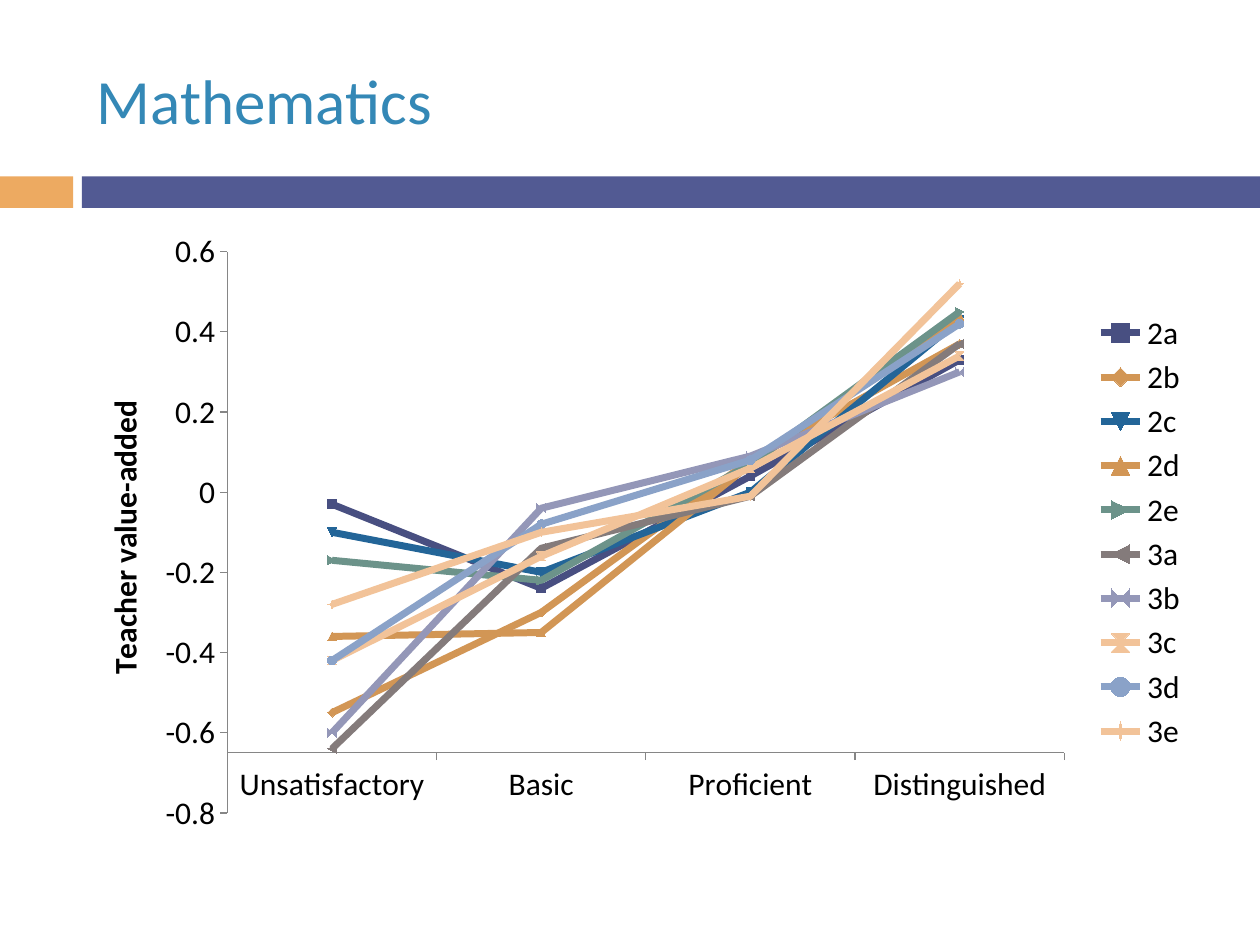
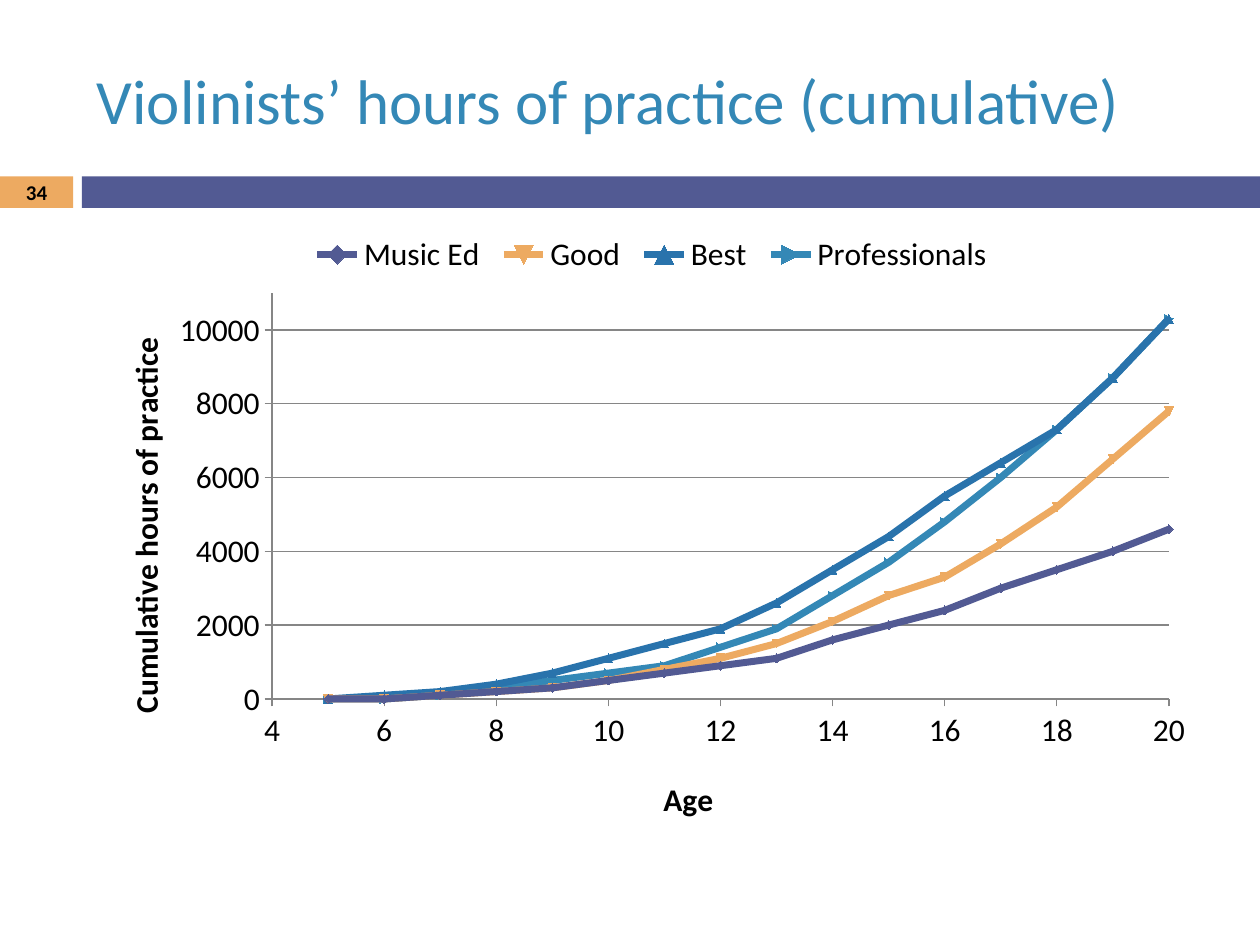
from lxml import etree
from pptx import Presentation
from pptx.chart.data import CategoryChartData, XyChartData
from pptx.dml.color import RGBColor
from pptx.enum.chart import (XL_CHART_TYPE, XL_LEGEND_POSITION,
                             XL_MARKER_STYLE, XL_TICK_MARK)
from pptx.enum.shapes import MSO_SHAPE
from pptx.enum.text import MSO_ANCHOR, PP_ALIGN
from pptx.oxml.ns import qn
from pptx.util import Inches, Pt

LINES = XL_CHART_TYPE.LINE_MARKERS
SCATTER = XL_CHART_TYPE.XY_SCATTER_LINES
RIGHT, TOP = XL_LEGEND_POSITION.RIGHT, XL_LEGEND_POSITION.TOP
AUTO = XL_MARKER_STYLE.AUTOMATIC
OUT, NONE = XL_TICK_MARK.OUTSIDE, XL_TICK_MARK.NONE
RECT = MSO_SHAPE.RECTANGLE
MIDDLE = MSO_ANCHOR.MIDDLE
LEFT, CENTER = PP_ALIGN.LEFT, PP_ALIGN.CENTER

FONT = "Calibri"
BLACK = RGBColor(0x00, 0x00, 0x00)
GRAY = RGBColor(0x86, 0x86, 0x86)
INDIGO = RGBColor(0x52, 0x5A, 0x93)
ORANGE = RGBColor(0xED, 0xAA, 0x61)
BLUE = RGBColor(0x29, 0x73, 0xAC)
TEAL = RGBColor(0x34, 0x88, 0xB6)
# Tints and shades of the ten rating lines
NAVY = RGBColor(0x48, 0x4F, 0x81)
OCHRE = RGBColor(0xD2, 0x96, 0x55)
DEEP = RGBColor(0x23, 0x65, 0x98)
SAGE = RGBColor(0x6C, 0x93, 0x8A)
TAUPE = RGBColor(0x84, 0x7B, 0x7B)
LILAC = RGBColor(0x94, 0x97, 0xB8)
PEACH = RGBColor(0xF2, 0xC3, 0x99)
SKY = RGBColor(0x8A, 0xA2, 0xC8)

TITLE_BOX = (0.67, 0.25, 8.92, 1.08)
TAB_BOX = (0, 1.4, 0.58, 0.25)
BAND_BOX = (0.65, 1.4, 9.35, 0.25)

LEVELS = ("Unsatisfactory", "Basic", "Proficient", "Distinguished")
RATINGS = (
    ("2a", NAVY, (-0.03, -0.24, 0.04, 0.33)),
    ("2b", OCHRE, (-0.55, -0.3, 0.08, 0.37)),
    ("2c", DEEP, (-0.1, -0.2, 0, 0.43)),
    ("2d", OCHRE, (-0.36, -0.35, 0.07, 0.44)),
    ("2e", SAGE, (-0.17, -0.22, 0.07, 0.45)),
    ("3a", TAUPE, (-0.64, -0.14, -0.01, 0.37)),
    ("3b", LILAC, (-0.6, -0.04, 0.09, 0.3)),
    ("3c", PEACH, (-0.42, -0.16, 0.06, 0.34)),
    ("3d", SKY, (-0.42, -0.08, 0.08, 0.42)),
    ("3e", PEACH, (-0.28, -0.1, -0.01, 0.52)),
)
AGES = range(5, 21)
HOURS = (
    ("Music Ed", INDIGO, (0, 0, 100, 200, 300, 500, 700, 900, 1100, 1600,
                          2000, 2400, 3000, 3500, 4000, 4600)),
    ("Good", ORANGE, (0, 0, 100, 200, 300, 500, 800, 1100, 1500, 2100,
                      2800, 3300, 4200, 5200, 6500, 7800)),
    ("Best", BLUE, (0, 100, 200, 400, 700, 1100, 1500, 1900, 2600, 3500,
                    4400, 5500, 6400, 7300, 8700, 10300)),
    ("Professionals", TEAL, (0, 0, 100, 300, 500, 700, 900, 1400, 1900, 2800,
                             3700, 4800, 6000, 7300, 8700, 10300)),
)


def inches(box):
    return [Inches(n) for n in box]


def style(font, size, color=BLACK, bold=False):
    font.name, font.size, font.bold = FONT, Pt(size), bold
    font.color.rgb = color


def add_text(slide, box, text, size, color, align=LEFT, bold=False, pad=0.1):
    frame = slide.shapes.add_textbox(*inches(box)).text_frame
    frame.word_wrap = True
    frame.vertical_anchor = MIDDLE
    frame.margin_left = frame.margin_right = Inches(pad)
    frame.margin_top = frame.margin_bottom = 0
    para = frame.paragraphs[0]
    para.alignment = align
    run = para.add_run()
    run.text = text
    style(run.font, size, color, bold)


def add_bar(slide, box, color):
    bar = slide.shapes.add_shape(RECT, *inches(box))
    bar.shadow.inherit = False
    bar.fill.solid()
    bar.fill.fore_color.rgb = color
    bar.line.fill.background()


def add_frame(deck, title, number=None):
    """Start a slide with its title, bands and page number."""
    slide = deck.slides.add_slide(deck.slide_layouts[6])
    add_bar(slide, TAB_BOX, ORANGE)
    add_bar(slide, BAND_BOX, INDIGO)
    add_text(slide, TITLE_BOX, title, 36, TEAL)
    if number:
        add_text(slide, TAB_BOX, number, 12, BLACK, CENTER, True, 0)
    return slide


def place(part, index, spot, inner=False):
    """Fix a chart part at fractions of the chart: x, y and maybe w, h."""
    for old in part.findall(qn("c:layout")):
        part.remove(old)
    layout = etree.Element(qn("c:layout"))
    manual = etree.SubElement(layout, qn("c:manualLayout"))
    pairs = [("layoutTarget", "inner")] if inner else []
    pairs += [("xMode", "edge"), ("yMode", "edge"), *zip("xywh", spot)]
    for tag, val in pairs:
        etree.SubElement(manual, qn("c:" + tag)).set("val", str(val))
    part.insert(index, layout)


def set_axis(axis, low=None, high=None, step=None, grid=False):
    axis.has_major_gridlines = grid
    axis.major_tick_mark, axis.minor_tick_mark = OUT, NONE
    if step:
        axis.minimum_scale, axis.maximum_scale = low, high
        axis.major_unit = step
    lines = [axis.format.line]
    if grid:
        lines.append(axis.major_gridlines.format.line)
    for line in lines:
        line.color.rgb = GRAY
        line.width = Pt(0.75)
    style(axis.tick_labels.font, 18)


def name_axis(axis, text, spot, turn=False):
    title = axis.axis_title
    run = title.text_frame.paragraphs[0].add_run()
    run.text = text
    style(run.font, 18, bold=True)
    if turn:
        body = title._element.find(".//" + qn("a:bodyPr"))
        body.set("rot", "-5400000")
        body.set("vert", "horz")
    place(title._element, 1, spot)


def add_plot(slide, box, kind, data, rows, area, side, key, first=0):
    """Draw the lines and legend; first is the index of the first marker."""
    chart = slide.shapes.add_chart(kind, *inches(box), data).chart
    chart.has_title = False
    style(chart.font, 10)
    place(chart._chartSpace.chart.plotArea, 0, area, True)
    chart.plots[0].vary_by_categories = False
    for i, (line, (_, color, _)) in enumerate(zip(chart.plots[0].series, rows)):
        line._element.find(qn("c:idx")).set("val", str(i + first))
        line.smooth = False
        line.format.line.color.rgb = color
        line.format.line.width = Pt(4)
        line.marker.style, line.marker.size = AUTO, 5
        fill = line.marker.format.fill
        fill.solid()
        fill.fore_color.rgb = color
        line.marker.format.line.color.rgb = color
    # Legend
    chart.has_legend = True
    chart.legend.position = side
    chart.legend.include_in_layout = False
    style(chart.legend.font, 18)
    place(chart.legend._element, 1, key)
    return chart


def add_math(deck):
    slide = add_frame(deck, "Mathematics")
    data = CategoryChartData()
    data.categories = LEVELS
    for name, _, vals in RATINGS:
        data.add_series(name, vals)
    chart = add_plot(slide, (0.5, 1.75, 9, 4.95), LINES, data, RATINGS,
                     (0.145, 0.05, 0.738, 0.9), RIGHT,
                     (0.905, 0.14, 0.09, 0.72))
    set_axis(chart.category_axis)
    set_axis(chart.value_axis, -0.8, 0.6, 0.2)
    chart.value_axis.crosses_at = -0.65
    name_axis(chart.value_axis, "Teacher value-added", (0.03, 0.28), True)


def add_music(deck):
    slide = add_frame(deck, "Violinists’ hours of practice (cumulative)", "34")
    data = XyChartData()
    for name, _, vals in HOURS:
        row = data.add_series(name)
        for age, hours in zip(AGES, vals):
            row.add_data_point(age, hours)
    chart = add_plot(slide, (0.67, 1.75, 8.92, 4.92), SCATTER, data, HOURS,
                     (0.167, 0.117, 0.798, 0.655), TOP,
                     (0.195, 0.02, 0.62, 0.07), first=1)
    set_axis(chart.category_axis, 4, 20, 2)
    set_axis(chart.value_axis, 0, 11000, 2000, True)
    name_axis(chart.category_axis, "Age", (0.51, 0.89))
    name_axis(chart.value_axis, "Cumulative hours of practice",
              (0.03, 0.18), True)


def main():
    deck = Presentation()
    deck.slide_width, deck.slide_height = Inches(10), Inches(7.5)
    add_math(deck)
    add_music(deck)
    deck.save("out.pptx")


if __name__ == "__main__":
    main()
